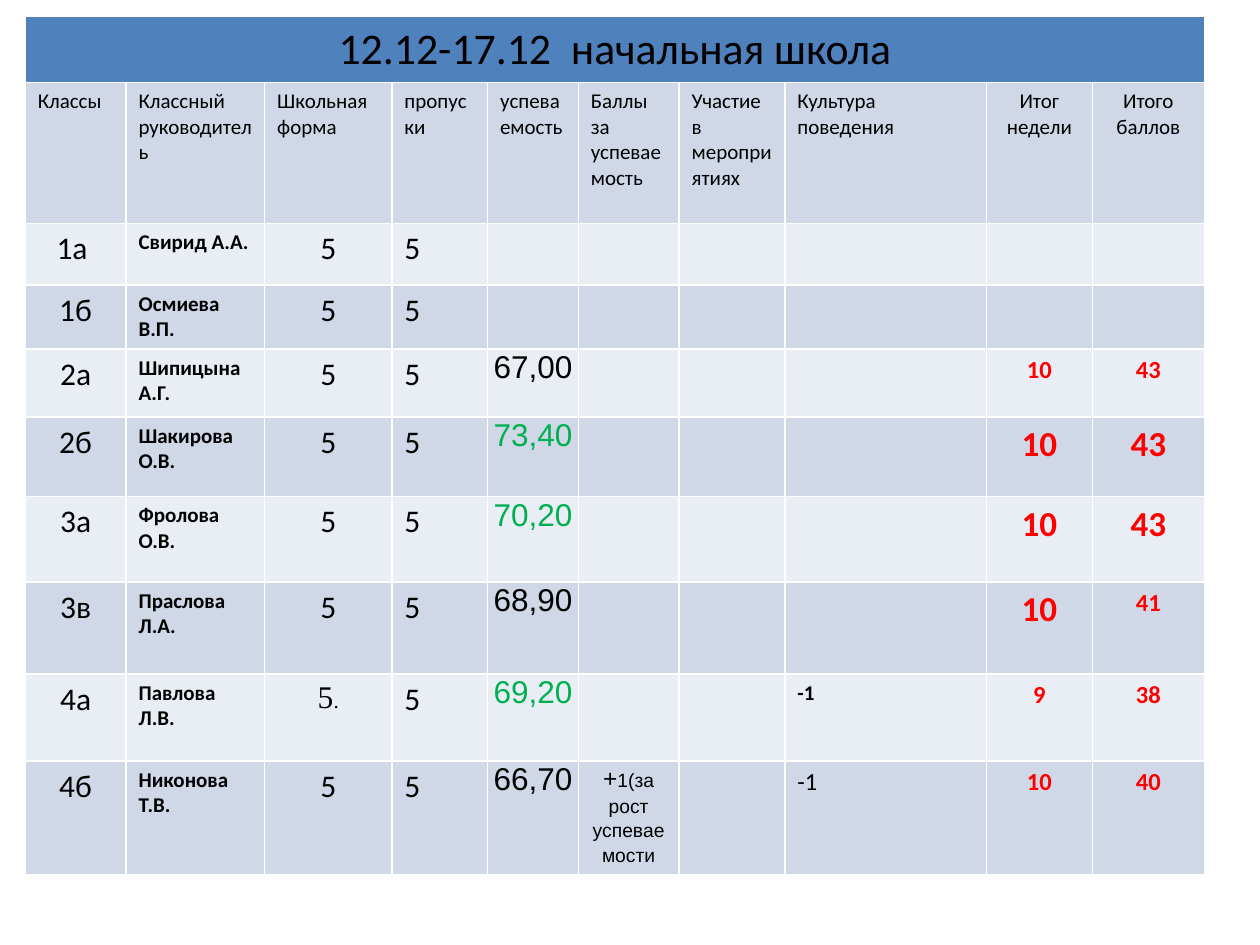
from pptx import Presentation
from pptx.dml.color import RGBColor
from pptx.enum import text
from pptx.util import Inches, Pt

WIDTHS = [0.8, 1.1, 1.01, 0.76, 0.72, 0.8, 0.84, 1.6, 0.84, 0.89]
HEIGHTS = [0.51, 1.12, 0.49, 0.49, 0.54, 0.63, 0.68, 0.73, 0.69, 0.9]
HEADS = ["Классы", "Классный руководитель", "Школьная  форма", "пропуски",
         "успеваемость", "Баллы за успеваемость", "Участие  в мероприятиях",
         "Культура поведения", "Итог недели", "Итого баллов"]
BLACK, RED, GREEN = "000000", "FF0000", "00B050"
BLUE, DARK, LIGHT = "4F81BD", "D0D8E8", "E9EDF4"
TIGHT = (0.01, 0.01, 0.01, 0)

GRADES = [
    ("1а ", "Свирид А.А.", None, None, None),
    ("1б", "Осмиева В.П.", None, None, None),
    ("2а", "Шипицына А.Г.", ("67,00", BLACK), ("10", 14), ("43", 14)),
    ("2б", "Шакирова О.В.", ("73,40", GREEN), ("10", 20), ("43", 20)),
    ("3а", "Фролова О.В.", ("70,20", GREEN), ("10", 20), ("43", 20)),
    ("3в", "Праслова Л.А.", ("68,90", BLACK), ("10", 20), ("41", 14)),
    ("4а", "Павлова Л.В.", ("69,20", GREEN), ("9", 14), ("38", 14)),
    ("4б", "Никонова Т.В.", ("66,70", BLACK), ("10", 14), ("40", 14)),
]


def rgb(code):
    return RGBColor.from_string(code)


def inset(cell, sides):
    left, top, right, low = map(Inches, sides)
    cell.margin_left, cell.margin_top = left, top
    cell.margin_right, cell.margin_bottom = right, low


def write(cell, words, size, color=BLACK, bold=False, mid=False, face="Calibri"):
    par = cell.text_frame.paragraphs[0]
    par.text = words
    par.alignment = text.PP_ALIGN.CENTER if mid else text.PP_ALIGN.LEFT
    font = par.font
    font.name, font.size, font.bold = face, Pt(size), bold
    font.color.rgb = rgb(color)
    return par


def extend(par, words, size):
    par.runs[0].font.size = par.font.size
    run = par.add_run()
    run.text = words
    run.font.size = Pt(size)


def make_grid(slide):
    grid = slide.shapes.add_table(
        len(HEIGHTS), len(WIDTHS), Inches(0.2), Inches(0.13),
        Inches(sum(WIDTHS)), Inches(sum(HEIGHTS))).table
    for col, width in zip(grid.columns, WIDTHS):
        col.width = Inches(width)
    for num, (row, height) in enumerate(zip(grid.rows, HEIGHTS)):
        row.height = Inches(height)
        for cell in row.cells:
            cell.fill.solid()
            cell.fill.fore_color.rgb = rgb(
                BLUE if num == 0 else DARK if num % 2 else LIGHT)
    return grid


def fill_heads(grid):
    grid.cell(0, 0).merge(grid.cell(0, len(WIDTHS) - 1))
    write(grid.cell(0, 0), "12.12-17.12  начальная школа", 25, mid=True)
    for col, head in enumerate(HEADS):
        write(grid.cell(1, col), head, 12, mid=col >= 8)


def fill_grade(cells, grade):
    name, tutor, rate, week, total = grade
    write(cells[0], name, 18, mid=True)
    write(cells[1], tutor, 12, bold=True)
    write(cells[2], "5", 18, mid=True)
    write(cells[3], "5", 18)
    if rate:
        inset(cells[4], TIGHT)
        write(cells[4], rate[0], 18, rate[1], mid=True, face="Arial")
        for cell, (score, size) in zip(cells[8:], (week, total)):
            write(cell, score, size, RED, bold=True, mid=True)


def fill_notes(grid):
    par = write(grid.cell(8, 2), "5", 18, mid=True, face="Times New Roman")
    extend(par, ".", 12)
    write(grid.cell(8, 7), "-1", 12, bold=True)
    write(grid.cell(9, 7), "-1", 14)
    bonus = grid.cell(9, 5)
    inset(bonus, (0.07, 0, 0.07, 0))
    par = write(bonus, "+", 14, mid=True, face="Arial")
    extend(par, "1(за рост успеваемости", 11)
    par.line_spacing = 1.15
    par.space_before = par.space_after = Pt(3)


def main():
    deck = Presentation()
    deck.slide_width, deck.slide_height = Inches(10), Inches(7.5)
    slide = deck.slides.add_slide(deck.slide_layouts[6])
    grid = make_grid(slide)
    fill_heads(grid)
    for num, grade in enumerate(GRADES, 2):
        fill_grade(list(grid.rows[num].cells), grade)
    fill_notes(grid)
    deck.save("out.pptx")


if __name__ == "__main__":
    main()
